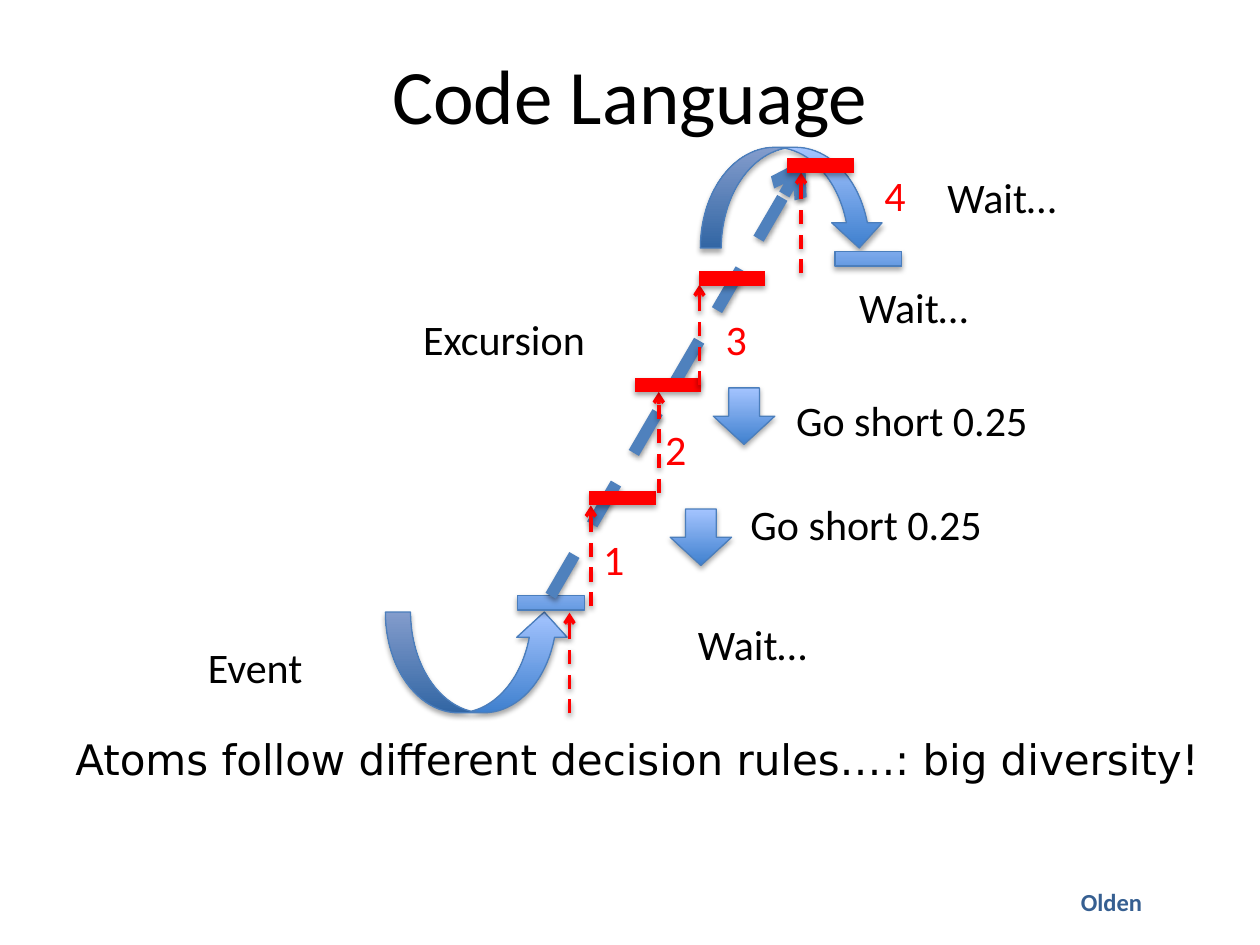
from pptx import Presentation
from pptx.dml.color import RGBColor as RGB
from pptx.enum.dml import MSO_LINE
from pptx.enum.shapes import MSO_CONNECTOR, MSO_SHAPE as SHAPE
from pptx.enum.text import MSO_ANCHOR as ANCHOR, PP_ALIGN as ALIGN
from pptx.oxml import parse_xml
from pptx.oxml.ns import nsdecls, qn
from pptx.util import Cm, Pt

THEME = {
    "black": RGB(0x00, 0x00, 0x00), "red": RGB(0xFF, 0x00, 0x00),
    "footer": RGB(0x36, 0x5F, 0x91), "trend": RGB(0x4F, 0x81, 0xBD),
    "outline": RGB(0x4B, 0x7E, 0xBC),
    "gradient": (RGB(0x3F, 0x80, 0xCE), RGB(0xA4, 0xC4, 0xFF)),
    "font": "Calibri", "note_font": "DejaVu Sans",
    "title_size": 44, "body_size": 24, "footer_size": 14,
}

BAR_SIZE = (1.83, 1.24)
CURVE_SIZE = (3.71, 2.03)
SHORT_SIZE = (1.24, 1.14)
RISE = 2.03
LINE_H = 1.27

TITLE = ("Code Language", 1.27, 0.3, 22.86, 3.18)
NOTE = ("Atoms follow different decision rules….: big diversity!", 1.27, 14.66, 23.27)
FOOTER = ("Olden", 21.54, 17.63, 3.05, 1.04)

BLUE_SHAPES = [
    (SHAPE.CURVED_UP_ARROW, 7.77, 12.34, CURVE_SIZE, ()),
    (SHAPE.CURVED_DOWN_ARROW, 14.12, 2.97, CURVE_SIZE, (0.207, 0.5, 0.25)),
    (SHAPE.MATH_MINUS, 10.19, 11.53, BAR_SIZE, ()),
    (SHAPE.MATH_MINUS, 16.59, 4.6, BAR_SIZE, ()),
    (SHAPE.DOWN_ARROW, 13.51, 10.26, SHORT_SIZE, ()),
    (SHAPE.DOWN_ARROW, 14.38, 7.82, SHORT_SIZE, ()),
]
TREND = ((11.1, 12.01), (16.23, 3.2))
EVENT_ARROW = (11.48, 14.38)
STEPS = [
    {"arrow": (11.91, 12.22), "bar": (11.63, 9.42), "label": ("1", 11.91, 10.64)},
    {"arrow": (13.28, 9.93), "bar": (12.55, 7.14), "label": ("2", 13.16, 8.41)},
    {"arrow": (14.1, 7.77), "bar": (13.84, 5.0), "label": ("3", 14.38, 6.2)},
    {"arrow": (16.15, 5.51), "bar": (15.62, 2.72), "label": ("4", 17.58, 3.3)},
]
CAPTIONS = [
    ("Event", 3.94, 12.8, 2.49),
    ("Excursion", 8.28, 6.2, 3.84),
    ("Go short 0.25", 14.88, 9.93, 5.23),
    ("Go short 0.25", 15.8, 7.82, 5.23),
    ("Wait…", 13.82, 12.34, 2.82),
    ("Wait…", 17.07, 5.56, 2.82),
    ("Wait…", 18.85, 3.33, 2.82),
]


def add_shadow(sp, dist, alpha):
    spPr = sp._element.spPr
    for old in spPr.findall(qn("a:effectLst")):
        spPr.remove(old)
    spPr.append(parse_xml(
        f'<a:effectLst {nsdecls("a")}><a:outerShdw blurRad="{Pt(3.1)}" dist="{Pt(dist)}" '
        f'dir="5400000" rotWithShape="0"><a:srgbClr val="000000">'
        f'<a:alpha val="{alpha * 1000}"/></a:srgbClr></a:outerShdw></a:effectLst>'))


def add_text(s, text, x, y, w, h=LINE_H, size=THEME["body_size"], color=THEME["black"],
             font=THEME["font"], bold=False, align=ALIGN.LEFT, wrap=False):
    sp = s.shapes.add_textbox(Cm(x), Cm(y), Cm(w), Cm(h))
    tf = sp.text_frame
    tf.word_wrap = wrap
    p = tf.paragraphs[0]
    p.text = text
    p.alignment = align
    p.font.size, p.font.name, p.font.bold = Pt(size), font, bold
    p.font.color.rgb = color
    return tf


def add_solid(s, kind, x, y, size, adjustments=(), red=False):
    sp = s.shapes.add_shape(kind, Cm(x), Cm(y), Cm(size[0]), Cm(size[1]))
    for i, value in enumerate(adjustments):
        sp.adjustments[i] = value
    sp.shadow.inherit = False
    if red:
        sp.fill.solid()
        sp.fill.fore_color.rgb = THEME["red"]
        sp.line.fill.background()
    else:
        sp.fill.gradient()
        sp.fill.gradient_angle = 90
        for stop, position, color in zip(sp.fill.gradient_stops, (0, 1), THEME["gradient"]):
            stop.position = position
            stop.color.rgb = color
        sp.line.color.rgb = THEME["outline"]
        sp.line.width = Pt(0.75)
    add_shadow(sp, 1.8, 35)


def add_arrow(s, start, end, color, width):
    sp = s.shapes.add_connector(MSO_CONNECTOR.STRAIGHT, *map(Cm, start + end))
    sp.line.color.rgb = color
    sp.line.width = Pt(width)
    sp.line.dash_style = MSO_LINE.DASH
    sp.line._get_or_add_ln().append(parse_xml(f'<a:tailEnd {nsdecls("a")} type="arrow"/>'))
    add_shadow(sp, 1.6, 38)


def add_rise(s, x, y):
    add_arrow(s, (x, y), (x, y - RISE), THEME["red"], 2)


def main():
    prs = Presentation()
    prs.slide_width, prs.slide_height = Cm(25.4), Cm(19.05)
    s = prs.slides.add_slide(prs.slide_layouts[6])

    tf = add_text(s, *FOOTER, size=THEME["footer_size"], color=THEME["footer"], bold=True, wrap=True)
    tf.margin_top = tf.margin_bottom = Cm(0.25)
    tf = add_text(s, *TITLE, size=THEME["title_size"], align=ALIGN.CENTER, wrap=True)
    tf.vertical_anchor = ANCHOR.MIDDLE

    for blue in BLUE_SHAPES:
        add_solid(s, *blue)
    add_arrow(s, *TREND, THEME["trend"], 6.75)
    add_text(s, *NOTE, font=THEME["note_font"], wrap=True)

    add_rise(s, *EVENT_ARROW)
    for step in STEPS:
        add_rise(s, *step["arrow"])
        add_solid(s, SHAPE.MATH_MINUS, *step["bar"], BAR_SIZE, red=True)
        add_text(s, *step["label"], 0.94, color=THEME["red"])
    for caption in CAPTIONS:
        add_text(s, *caption)

    prs.save("out.pptx")


if __name__ == "__main__":
    main()
